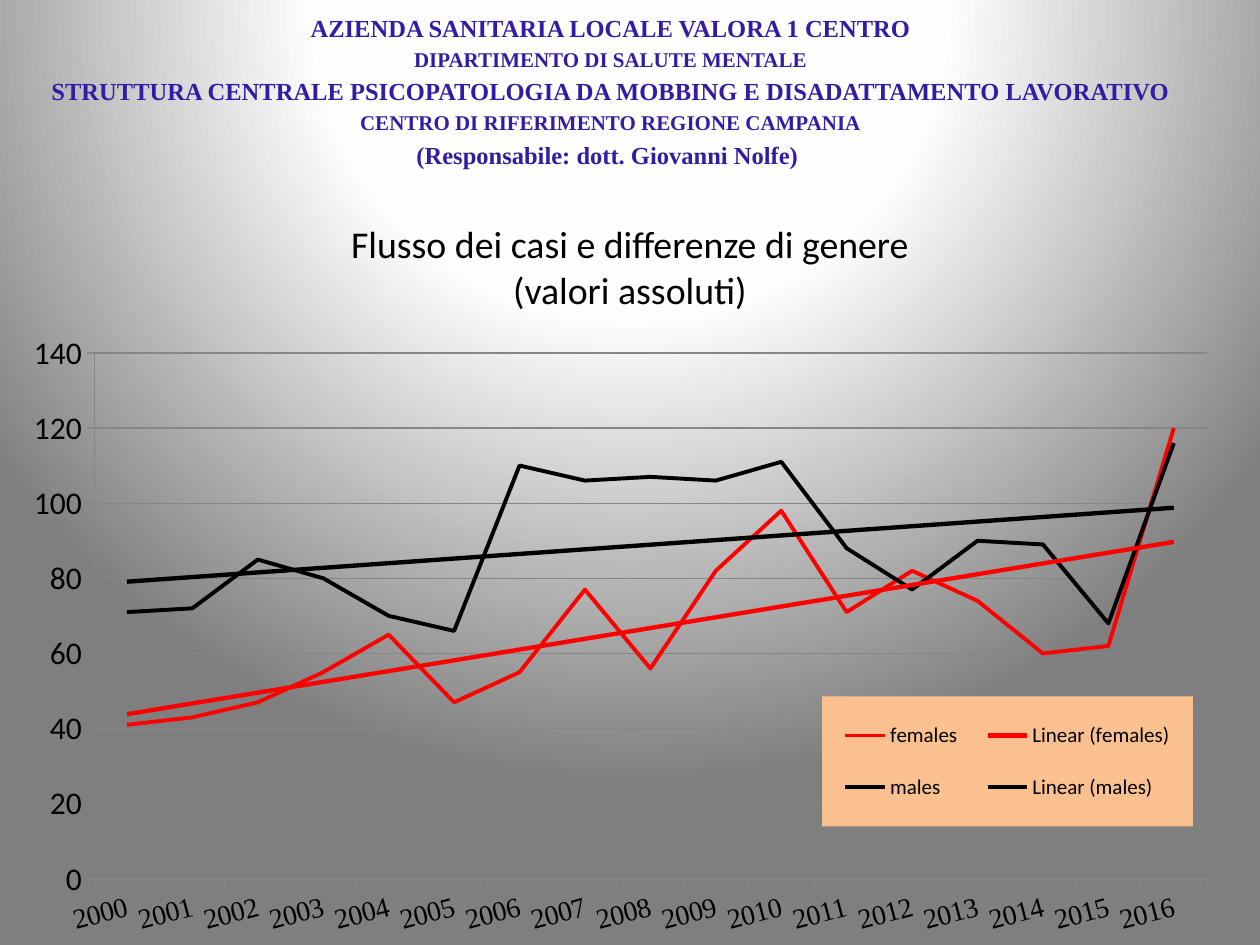
from lxml import etree
from pptx import Presentation
from pptx.chart.data import CategoryChartData
from pptx.dml.color import RGBColor
from pptx.enum.chart import XL_CHART_TYPE, XL_LEGEND_POSITION, XL_MARKER_STYLE, XL_TICK_MARK
from pptx.enum.text import MSO_ANCHOR, MSO_AUTO_SIZE, PP_ALIGN
from pptx.oxml import parse_xml
from pptx.oxml.ns import qn
from pptx.util import Cm, Pt

LINE = XL_CHART_TYPE.LINE
RIGHT = XL_LEGEND_POSITION.RIGHT
BARE = XL_MARKER_STYLE.NONE
OUT = XL_TICK_MARK.OUTSIDE
MID = PP_ALIGN.CENTER
CENTRE = MSO_ANCHOR.MIDDLE
FIXED = MSO_AUTO_SIZE.NONE

TITLE = "Flusso dei casi e differenze di genere\v(valori assoluti)"
HEAD = [
    ("AZIENDA SANITARIA LOCALE VALORA 1 CENTRO", 14),
    ("DIPARTIMENTO DI SALUTE MENTALE", 12),
    ("STRUTTURA CENTRALE PSICOPATOLOGIA DA MOBBING E DISADATTAMENTO LAVORATIVO", 14),
    ("CENTRO DI RIFERIMENTO REGIONE CAMPANIA", 12),
    ("(Responsabile: dott. Giovanni Nolfe) ", 14),
]
YEARS = [str(year) for year in range(2000, 2017)]
CASES = {
    "females": [41, 43, 47, 55, 65, 47, 55, 77, 56, 82, 98, 71, 82, 74, 60, 62, 120],
    "males": [71, 72, 85, 80, 70, 66, 110, 106, 107, 106, 111, 88, 77, 90, 89, 68, 116],
}
HUES = {"females": "FF0000", "males": "000000", "text": "000000",
        "head": "301DA3", "grid": "868686", "key": "FAC090"}
GLOW = [(0, "FFFFFF"), (40, "FEFEFE"), (100, "7F7F7F")]
BOXES = {
    "title": (1.9, 4.24, 21.6, 2.26),
    "head": (-1.09, 0.13, 26.8, 3.71),
    "chart": (0, 6.73, 25, 12.32),
}
PLOT = (0.076, 0.031, 0.897, 0.861)
KEY = (0.663, 0.593, 0.299, 0.213)
SPACE = ('xmlns:a="http://schemas.openxmlformats.org/drawingml/2006/main" '
         'xmlns:c="http://schemas.openxmlformats.org/drawingml/2006/chart"')


def style(item, **form):
    for name, value in form.items():
        setattr(item, name, value)


def ink(font, face, size, hue, bold=False):
    style(font, name=face, size=Pt(size), bold=bold)
    font.color.rgb = RGBColor.from_string(HUES[hue])


def stroke(line, hue, width):
    line.color.rgb = RGBColor.from_string(HUES[hue])
    line.width = Pt(width)


def solid(hue):
    return f'<a:solidFill><a:srgbClr val="{HUES[hue]}"/></a:solidFill>'


def layout(box, inner=False):
    node = etree.Element(qn("c:layout"))
    hand = etree.SubElement(node, qn("c:manualLayout"))
    rows = [("layoutTarget", "inner")] if inner else []
    rows += [("xMode", "edge"), ("yMode", "edge"), *zip("xywh", box)]
    for tag, value in rows:
        etree.SubElement(hand, qn("c:" + tag), val=str(value))
    return node


def drop(node):
    for old in node.findall(qn("c:layout")):
        node.remove(old)


def glow(slide):
    slide.background.fill.gradient()
    old = slide.element.find(".//" + qn("a:gradFill"))
    stops = "".join(f'<a:gs pos="{at * 1000}"><a:srgbClr val="{hue}"/></a:gs>'
                    for at, hue in GLOW)
    new = parse_xml(
        f'<a:gradFill {SPACE} rotWithShape="1"><a:gsLst>{stops}</a:gsLst>'
        '<a:path path="circle"><a:fillToRect l="50000" t="-80000" r="50000" b="180000"/>'
        '</a:path></a:gradFill>')
    old.getparent().replace(old, new)


def trend(line):
    name = line.name
    node = parse_xml(
        f'<c:trendline {SPACE}><c:name>Linear ({name})</c:name>'
        f'<c:spPr><a:ln w="{Pt(2.5)}">{solid(name)}</a:ln></c:spPr>'
        '<c:trendlineType val="linear"/><c:dispRSqr val="0"/><c:dispEq val="0"/>'
        '</c:trendline>')
    line._element.find(qn("c:cat")).addprevious(node)


def title(slide):
    shape = slide.shapes.title
    place = map(Cm, BOXES["title"])
    style(shape, **dict(zip(("left", "top", "width", "height"), place)))
    frame = shape.text_frame
    style(frame, text=TITLE, word_wrap=True, auto_size=FIXED, vertical_anchor=CENTRE)
    para = frame.paragraphs[0]
    para.alignment = MID
    for run in para.runs:
        ink(run.font, "Calibri", 21.6, "text")


def head(slide):
    frame = slide.shapes.add_textbox(*map(Cm, BOXES["head"])).text_frame
    frame.word_wrap = True
    for i, (text, size) in enumerate(HEAD):
        para = frame.add_paragraph() if i else frame.paragraphs[0]
        style(para, alignment=MID, space_before=Pt(size * 0.2))
        run = para.add_run()
        run.text = text
        ink(run.font, "Times New Roman", size, "head", True)


def graph(slide):
    data = CategoryChartData()
    data.categories = YEARS
    for name, cases in CASES.items():
        data.add_series(name, cases)
    chart = slide.shapes.add_chart(LINE, *map(Cm, BOXES["chart"]), data).chart
    style(chart, has_title=False, has_legend=True)
    ink(chart.font, "Calibri", 18, "text")

    plot = chart.plots[0]
    plot.vary_by_categories = False
    for line in plot.series:
        line.smooth = False
        line.marker.style = BARE
        stroke(line.format.line, line.name, 2.25)
        trend(line)

    years, count = chart.category_axis, chart.value_axis
    style(count, minimum_scale=0, maximum_scale=140, major_unit=20,
          has_major_gridlines=True)
    stroke(count.major_gridlines.format.line, "grid", 0.75)
    for axis in (years, count):
        axis.major_tick_mark = OUT
        stroke(axis.format.line, "grid", 0.75)
    ink(count.tick_labels.font, "Calibri", 18, "text")
    ink(years.tick_labels.font, "Times New Roman", 16, "text")
    years._element.find(".//" + qn("a:bodyPr")).set("rot", "-900000")

    key = chart.legend
    style(key, position=RIGHT, include_in_layout=False)
    ink(key.font, "Calibri", 12, "text")
    node = key._element
    drop(node)
    node.find(qn("c:legendPos")).addnext(layout(KEY))
    node.find(qn("c:txPr")).addprevious(
        parse_xml(f'<c:spPr {SPACE}>{solid("key")}</c:spPr>'))

    area = node.getparent().find(qn("c:plotArea"))
    drop(area)
    area.insert(0, layout(PLOT, True))


def main():
    deck = Presentation()
    style(deck, slide_width=Cm(25.4), slide_height=Cm(19.05))
    slide = deck.slides.add_slide(deck.slide_layouts[5])
    glow(slide)
    title(slide)
    head(slide)
    graph(slide)
    deck.save("out.pptx")


if __name__ == "__main__":
    main()
